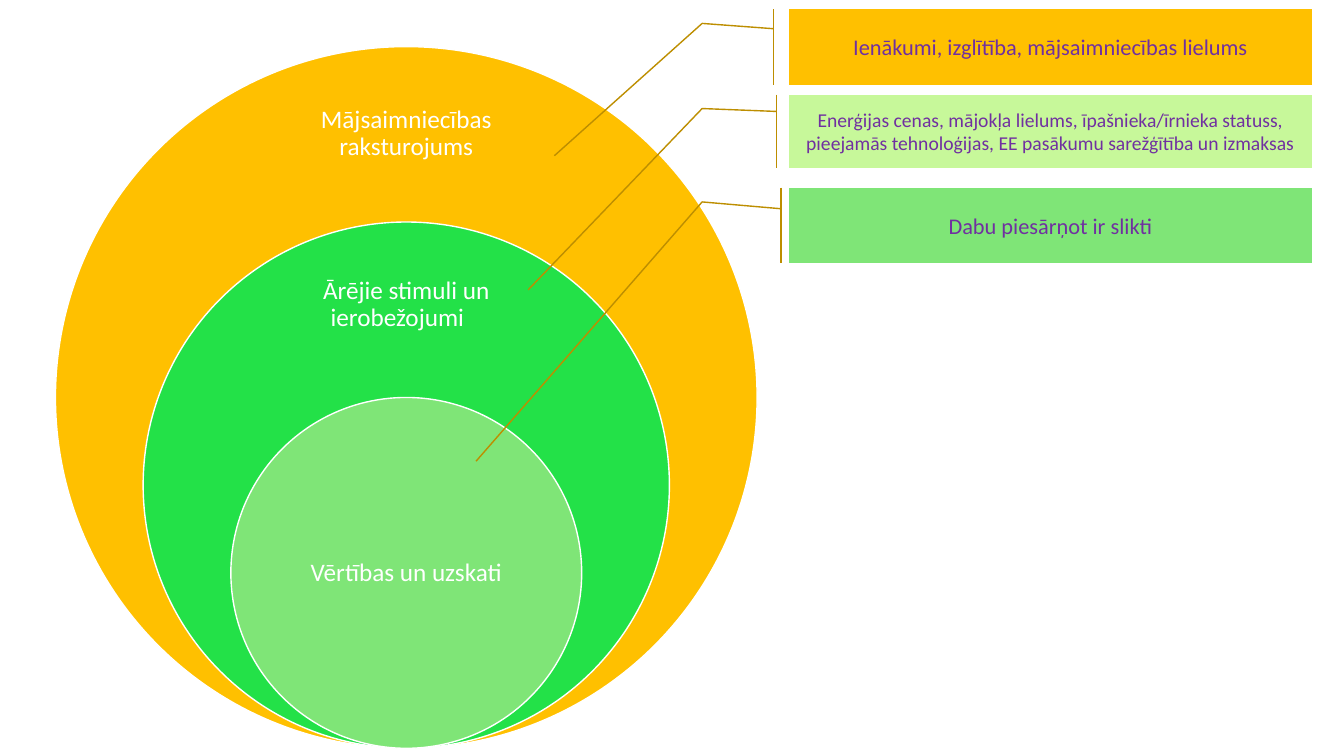
"""Build a slide of nested household factor circles with callouts."""
from pptx import Presentation
from pptx.dml.color import RGBColor
from pptx.enum.shapes import MSO_SHAPE
from pptx.enum.text import MSO_ANCHOR, PP_ALIGN
from pptx.util import Pt


def paint(shape, fill, line):
    shape.shadow.inherit = False
    shape.fill.solid()
    shape.fill.fore_color.rgb = RGBColor.from_string(fill)
    shape.line.color.rgb = RGBColor.from_string(line)
    shape.line.width = Pt(1)


def write(shape, text, size, color):
    frame = shape.text_frame
    frame.word_wrap = True
    frame.vertical_anchor = MSO_ANCHOR.MIDDLE
    para = frame.paragraphs[0]
    para.text = text
    para.alignment = PP_ALIGN.CENTER
    para.font.name = "Calibri"
    para.font.size = Pt(size)
    para.font.color.rgb = RGBColor.from_string(color)
    return frame


deck = Presentation()
deck.slide_width, deck.slide_height = Pt(960), Pt(540)
page = deck.slides.add_slide(deck.slide_layouts[6])

center, bottom, outer_diameter = 290.2, 534.5, 501.2
circles = [
    (1, "FFC000", "Mājsaimniecības raksturojums", 58.3, 175, 74.9),
    (0.75, "23E148", "Ārējie stimuli un ierobežojumi\t", 182.2, 175, 70.6),
    (0.5, "7FE577", "Vērtības un uzskati", 347, 177.1, 125.3),
]
for scale, fill, text, top, width, height in circles:
    diameter = outer_diameter * scale
    circle = page.shapes.add_shape(
        MSO_SHAPE.OVAL, Pt(center - diameter / 2), Pt(bottom - diameter),
        Pt(diameter), Pt(diameter))
    paint(circle, fill, "FFFFFF")
    label = page.shapes.add_textbox(
        Pt(center - width / 2), Pt(top), Pt(width), Pt(height))
    frame = write(label, text, 18, "FFFFFF")
    frame.margin_left = frame.margin_right = Pt(10)
    frame.margin_top = frame.margin_bottom = Pt(10)
    frame.paragraphs[0].line_spacing = 0.9

callouts = [
    (6.5, 54, "FFC000", 16, "Ienākumi, izglītība, mājsaimniecības lielums",
     (0.26, -0.03), (1.94, -0.45)),
    (67.7, 52, "C7F89A", 14,
     "Enerģijas cenas, mājokļa lielums, īpašnieka/īrnieka statuss, "
     "pieejamās tehnoloģijas, EE pasākumu sarežģītība un izmaksas",
     (0.23, -0.025), (2.68, -0.5)),
    (134, 54, "7FE577", 16, "Dabu piesārņot ir slikti",
     (0.28, -0.016), (3.62, -0.6)),
]
elbow = (0.19, -0.167)
for top, height, fill, size, text, start, tip in callouts:
    callout = page.shapes.add_shape(
        MSO_SHAPE.LINE_CALLOUT_2_ACCENT_BAR,
        Pt(563.8), Pt(top), Pt(373), Pt(height))
    for index, value in enumerate(start + elbow + tip):
        callout.adjustments[index] = value
    paint(callout, fill, "BD8E00")
    write(callout, text, size, "7030A0")

deck.save("out.pptx")
